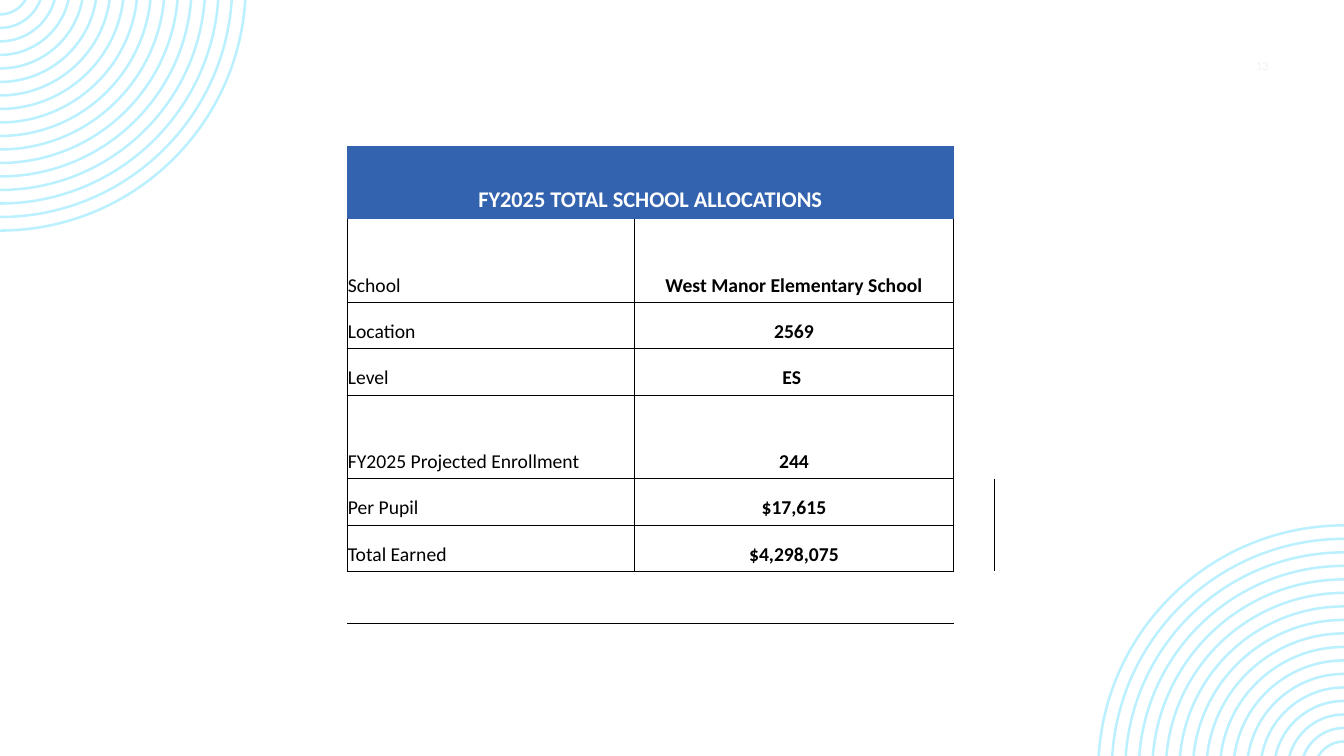
import math

from lxml import etree
from pptx import Presentation
from pptx.dml.color import RGBColor
from pptx.enum import text
from pptx.oxml import ns
from pptx.util import Inches, Pt

WHITE = RGBColor(0xFF, 0xFF, 0xFF)
BLACK = RGBColor(0x00, 0x00, 0x00)
BLUE = RGBColor(0x33, 0x62, 0xAE)
SKY = RGBColor(0xBB, 0xF0, 0xFF)
PALE = RGBColor(0xF2, 0xF2, 0xF2)

WIDTH, HEIGHT = 13.33, 7.5
NO_GRID_STYLE = "{2D5ABB26-0587-4C30-8999-92F81FD0307C}"
COL_WIDTHS = [2.85, 0.8, 1.08, 1.29, 0.4]
ROW_HEIGHTS = [0.36, 0.36, 0.83, 0.46, 0.46, 0.83, 0.46, 0.46, 0.51]
HEADING = "FY2025 TOTAL SCHOOL ALLOCATIONS"
ALLOCATIONS = [
    ("School", "West Manor Elementary School", "B"),
    ("Location", "2569", "TB"),
    ("Level", "ES ", "TB"),
    ("FY2025 Projected Enrollment", "244", "TB"),
    ("Per Pupil", "$17,615", "RTB"),
    ("Total Earned", "$4,298,075", "RTB"),
]


def write(tf, content, size=14, color=BLACK, bold=False,
          align=text.PP_ALIGN.LEFT):
    p = tf.paragraphs[0]
    p.alignment = align
    r = p.add_run()
    r.text = content
    r.font.name = "Calibri"
    r.font.size = Pt(size)
    r.font.bold = bold
    r.font.color.rgb = color


def arc(radius, drop):
    start, end = math.asin(drop / radius), math.pi / 2
    pull = 4 / 3 * math.tan((end - start) / 4)
    points = []
    for angle, turn in ((start, 0), (start, pull), (end, -pull), (end, 0)):
        x = radius * (math.cos(angle) - turn * math.sin(angle))
        y = radius * (math.sin(angle) + turn * math.cos(angle)) - drop
        points.append((x, y))
    return points


def curve(lines):
    bezier = etree.Element(ns.qn("a:cubicBezTo"))
    lines[0].addprevious(bezier)
    for line in lines:
        bezier.append(line[0])
        line.getparent().remove(line)


def add_rings(slide, place, count=17, outer=2.45, gap=0.134, band=0.025,
              drop=0.15):
    builder = None
    for i in range(count):
        radius = outer - gap * i
        points = arc(radius, drop) + arc(radius - band, drop)[::-1]
        corners = [tuple(Inches(v) for v in place(x, y)) for x, y in points]
        if builder is None:
            builder = slide.shapes.build_freeform(*corners[0])
        else:
            builder.move_to(*corners[0])
        builder.add_line_segments(corners[1:], close=True)
    sp = builder.convert_to_shape()
    lines = list(sp._element.iter(ns.qn("a:lnTo")))
    for i in range(0, len(lines), 7):
        curve(lines[i:i + 3])
        curve(lines[i + 4:i + 7])
    sp.shadow.inherit = False
    sp.fill.solid()
    sp.fill.fore_color.rgb = SKY
    sp.line.fill.background()


def set_borders(cell, sides):
    tcPr = cell._tc.get_or_add_tcPr()
    for i, side in enumerate(s for s in "LRTB" if s in sides):
        ln = etree.Element(ns.qn(f"a:ln{side}"), w=str(Pt(0.5)))
        fill = etree.SubElement(ln, ns.qn("a:solidFill"))
        etree.SubElement(fill, ns.qn("a:srgbClr"), val=str(BLACK))
        tcPr.insert(i, ln)


def style_cell(cell, fill=None):
    cell.vertical_anchor = text.MSO_ANCHOR.BOTTOM
    cell.margin_left = cell.margin_right = cell.margin_top = Inches(0.01)
    cell.margin_bottom = Inches(0.05)
    if fill is None:
        cell.fill.background()
    else:
        cell.fill.solid()
        cell.fill.fore_color.rgb = fill
    end = cell.text_frame.paragraphs[0]._p.get_or_add_endParaRPr()
    end.set("sz", "1400")


def add_allocation_table(slide):
    frame = slide.shapes.add_table(
        len(ROW_HEIGHTS), len(COL_WIDTHS), Inches(3.44), Inches(1.45),
        Inches(sum(COL_WIDTHS)), Inches(sum(ROW_HEIGHTS)))
    table = frame.table
    table.first_row = table.horz_banding = False
    table._tbl.tblPr.find(ns.qn("a:tableStyleId")).text = NO_GRID_STYLE
    for col, width in zip(table.columns, COL_WIDTHS):
        col.width = Inches(width)
    for row, height in zip(table.rows, ROW_HEIGHTS):
        row.height = Inches(height)

    last = len(ROW_HEIGHTS) - 1
    for r in range(len(ROW_HEIGHTS)):
        for c in range(len(COL_WIDTHS)):
            fill = None
            if c < 4 and r < 2:
                fill = BLUE
            elif c < 4 and (c > 0 or r == last):
                fill = WHITE
            style_cell(table.cell(r, c), fill)

    heading = table.cell(0, 0)
    heading.merge(table.cell(1, 3))
    write(heading.text_frame, HEADING, size=16, color=WHITE, bold=True,
          align=text.PP_ALIGN.CENTER)

    for r, (label, value, sides) in enumerate(ALLOCATIONS, start=2):
        name, amount = table.cell(r, 0), table.cell(r, 1)
        amount.merge(table.cell(r, 3))
        write(name.text_frame, label)
        write(amount.text_frame, value, bold=True,
              align=text.PP_ALIGN.CENTER)
        set_borders(name, "LR" + sides)
        set_borders(amount, "L" + sides)
        set_borders(table.cell(r, 2), sides.replace("R", ""))
        set_borders(table.cell(r, 3), sides)
        if "R" in sides:
            set_borders(table.cell(r, 4), "L")

    for c in range(4):
        set_borders(table.cell(last, c), "TB")


def add_page_number(slide, number):
    sp = slide.shapes.add_textbox(Inches(11.68), Inches(0.5), Inches(1),
                                  Inches(0.3))
    tf = sp.text_frame
    tf.word_wrap = True
    tf.vertical_anchor = text.MSO_ANCHOR.MIDDLE
    write(tf, number, size=9, color=PALE, align=text.PP_ALIGN.RIGHT)


def main():
    prs = Presentation()
    prs.slide_width, prs.slide_height = Inches(WIDTH), Inches(HEIGHT)
    slide = prs.slides.add_slide(prs.slide_layouts[6])
    add_rings(slide, lambda x, y: (x, y))
    add_rings(slide, lambda x, y: (WIDTH - x, HEIGHT - y))
    add_page_number(slide, "13")
    add_allocation_table(slide)
    prs.save("out.pptx")


if __name__ == "__main__":
    main()
